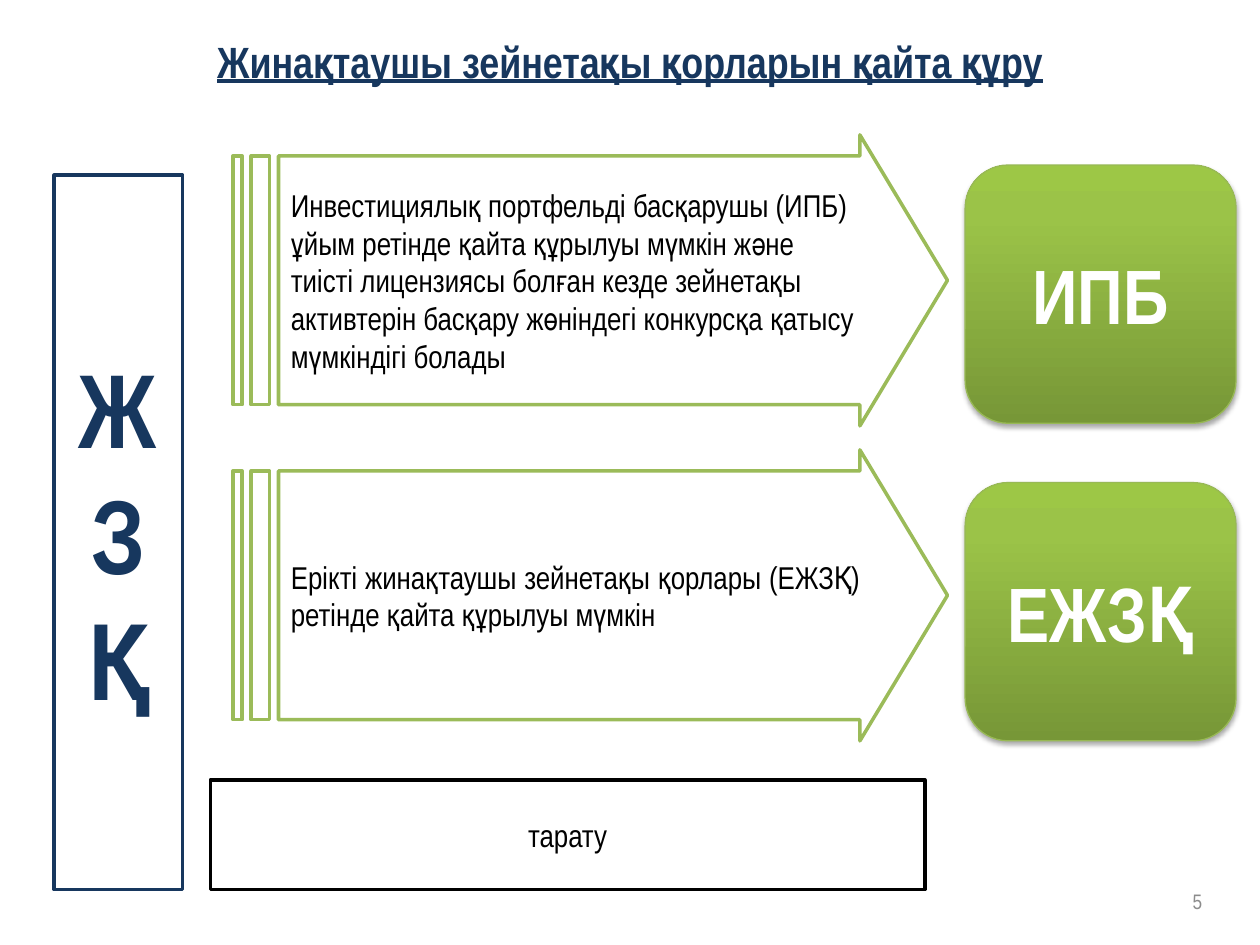
from copy import deepcopy
from dataclasses import dataclass

from lxml.etree import SubElement
from pptx import Presentation
from pptx.dml.color import RGBColor
from pptx.enum.shapes import MSO_SHAPE
from pptx.enum.text import MSO_ANCHOR, PP_ALIGN
from pptx.oxml.ns import qn
from pptx.shapes.autoshape import Shape
from pptx.util import Emu, Inches, Pt

NAVY, GREEN, BLACK, WHITE, GREY = "17375E", "9BBB59", "000000", "FFFFFF", "8C8C8C"
GLOSS = [(0, "779737"), (0.8, "9BC348"), (1, "9DC746")]
FONT = "Arial Narrow"


@dataclass
class Box:
    """Place and size in percent of the slide's width and height."""
    left: float
    top: float
    width: float
    height: float

    def lower(self, step: float) -> "Box":
        return Box(self.left, self.top + step, self.width, self.height)


@dataclass
class Style:
    size: int
    color: str
    bold: bool = False
    underline: bool = False
    align: PP_ALIGN = PP_ALIGN.CENTER


@dataclass
class Path:
    """One way to rebuild a fund: the arrow's text and the resulting body."""
    text: str
    align: PP_ALIGN
    result: str


PATHS = [
    Path("Инвестициялық портфельді басқарушы (ИПБ) ұйым ретінде қайта құрылуы "
         "мүмкін және тиісті лицензиясы болған кезде зейнетақы активтерін "
         "басқару жөніндегі конкурсқа қатысу мүмкіндігі болады",
         PP_ALIGN.LEFT, "ИПБ"),
    Path("Ерікті жинақтаушы зейнетақы қорлары (ЕЖЗҚ) ретінде қайта құрылуы мүмкін",
         PP_ALIGN.JUSTIFY, "ЕЖЗҚ"),
]
ARROW, ARROW_STEP = Box(18.5, 14.27, 56.7, 30.8), 33.33
TILE, TILE_STEP = Box(76.6, 17.47, 21.5, 27.33), 33.6

deck = Presentation()
deck.slide_width, deck.slide_height = Inches(10), Inches(7.5)
slide = deck.slides.add_slide(deck.slide_layouts[6])


def rgb(code: str) -> RGBColor:
    return RGBColor.from_string(code)


def place(box: Box) -> list[Emu]:
    wide, high = deck.slide_width / 100, deck.slide_height / 100
    return [Emu(round(part)) for part in (
        box.left * wide, box.top * high, box.width * wide, box.height * high)]


def write(shape: Shape, text: str, style: Style) -> None:
    frame = shape.text_frame
    frame.word_wrap = True
    frame.vertical_anchor = MSO_ANCHOR.MIDDLE
    para = frame.paragraphs[0]
    para.alignment = style.align
    run = para.add_run()
    run.text = text
    font = run.font
    font.name, font.size = FONT, Pt(style.size)
    font.bold, font.underline = style.bold, style.underline
    font.color.rgb = rgb(style.color)


def label(box: Box, text: str, style: Style) -> None:
    write(slide.shapes.add_textbox(*place(box)), text, style)


def panel(kind: MSO_SHAPE, box: Box, edge: str, text: str, style: Style,
          weight: float = 2) -> Shape:
    shape = slide.shapes.add_shape(kind, *place(box))
    shape.shadow.inherit = False
    shape.fill.solid()
    shape.fill.fore_color.rgb = rgb(WHITE)
    shape.line.color.rgb = rgb(edge)
    shape.line.width = Pt(weight)
    write(shape, text, style)
    return shape


def shine(shape: Shape) -> None:
    """Give the shape a three-stop gradient and a soft shadow below."""
    fill = shape.fill
    fill.gradient()
    fill.gradient_angle = 90
    props = shape.element.spPr
    stops = props.find(qn("a:gradFill")).find(qn("a:gsLst"))
    stops.append(deepcopy(stops[-1]))
    for stop, (place_, code) in zip(fill.gradient_stops, GLOSS):
        stop.position = place_
        stop.color.rgb = rgb(code)
    shade = SubElement(props.find(qn("a:effectLst")), qn("a:outerShdw"),
                       blurRad=str(Pt(3.1)), dist=str(Pt(1.8)),
                       dir="5400000", rotWithShape="0")
    tint = SubElement(shade, qn("a:srgbClr"), val=BLACK)
    SubElement(tint, qn("a:alpha"), val="35000")


def draw() -> None:
    label(Box(5, 1.73, 90, 9.47), "Жинақтаушы зейнетақы қорларын қайта құру",
          Style(25, NAVY, bold=True, underline=True))
    panel(MSO_SHAPE.RECTANGLE, Box(4.3, 18.53, 10.2, 75.6), NAVY, "ЖЗҚ",
          Style(60, NAVY, bold=True))
    for row, way in enumerate(PATHS):
        arrow = panel(MSO_SHAPE.STRIPED_RIGHT_ARROW, ARROW.lower(row * ARROW_STEP),
                      GREEN, way.text, Style(18, BLACK, align=way.align))
        arrow.adjustments[0], arrow.adjustments[1] = 0.855, 0.301
        tile = panel(MSO_SHAPE.ROUNDED_RECTANGLE, TILE.lower(row * TILE_STEP),
                     "98B955", way.result, Style(44, WHITE, bold=True), 0.75)
        shine(tile)
    panel(MSO_SHAPE.RECTANGLE, Box(16.7, 82.53, 56.7, 11.6), BLACK, "тарату",
          Style(18, BLACK))
    label(Box(73.1, 92.67, 23.3, 5.33), "5", Style(12, GREY, align=PP_ALIGN.RIGHT))


if __name__ == "__main__":
    draw()
    deck.save("out.pptx")
